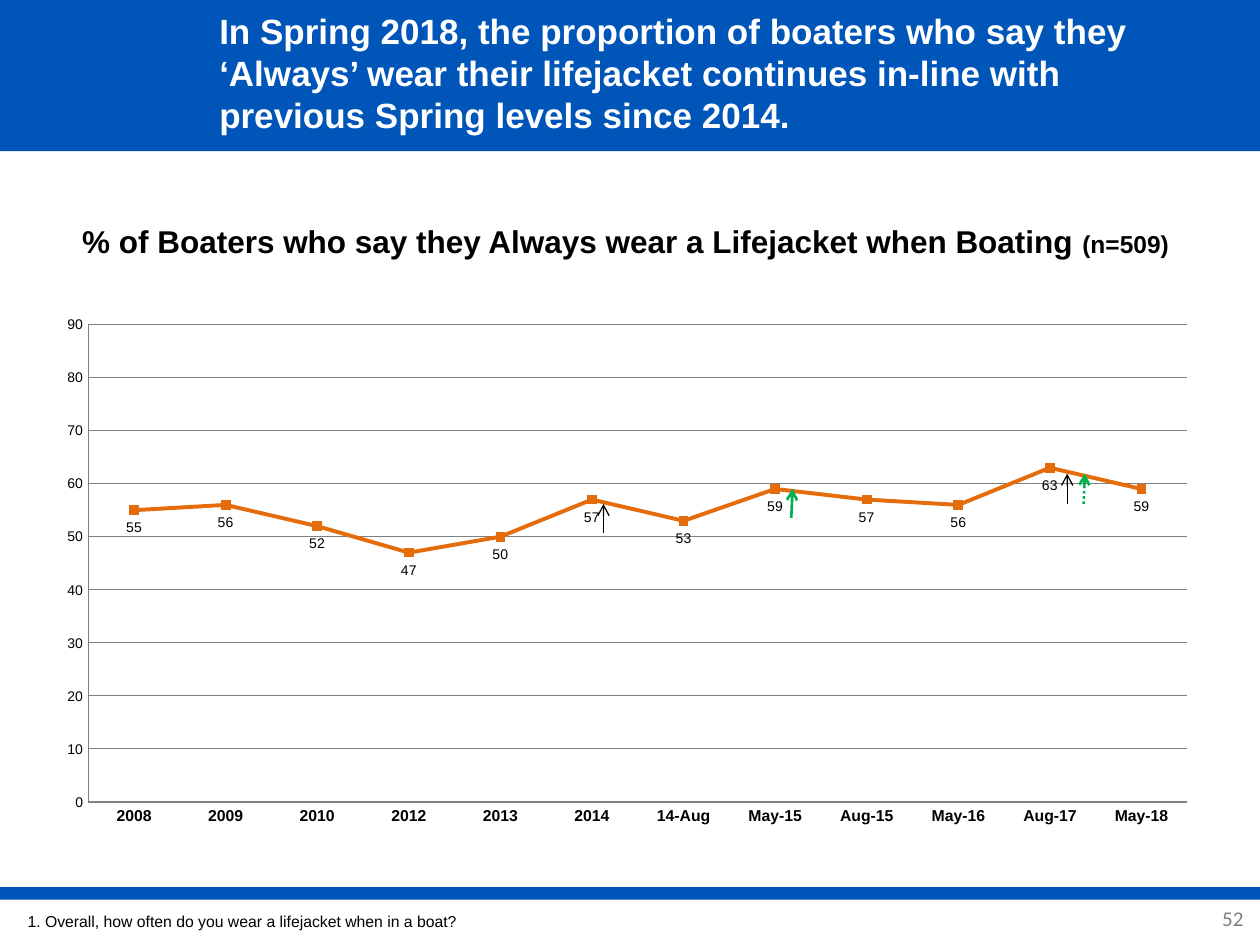
from lxml.etree import SubElement
from pptx import Presentation
from pptx.chart.data import CategoryChartData
from pptx.dml.color import RGBColor
from pptx.enum.chart import XL_CHART_TYPE as ChartType, XL_LABEL_POSITION as LabelPos
from pptx.enum.chart import XL_MARKER_STYLE as Marker, XL_TICK_MARK as Tick
from pptx.enum.dml import MSO_LINE_DASH_STYLE as Dash
from pptx.enum.shapes import MSO_CONNECTOR as Connector, MSO_SHAPE as Shape
from pptx.enum.text import MSO_ANCHOR as Anchor, MSO_AUTO_SIZE as AutoSize, PP_ALIGN as Align
from pptx.oxml.ns import qn
from pptx.util import Inches, Pt

BLUE = RGBColor(0x00, 0x55, 0xB9)
WHITE = RGBColor(0xFF, 0xFF, 0xFF)
BLACK = RGBColor(0x00, 0x00, 0x00)
GRAY = RGBColor(0x80, 0x80, 0x80)
ORANGE = RGBColor(0xE4, 0x6C, 0x0A)
GREEN = RGBColor(0x00, 0xB0, 0x50)

YEARS = ["2008", "2009", "2010", "2012", "2013", "2014", "14-Aug",
         "May-15", "Aug-15", "May-16", "Aug-17", "May-18"]
ALWAYS_WEAR = [55, 56, 52, 47, 50, 57, 53, 59, 57, 56, 63, 59]
PLOT_AREA = {"x": 0.04, "y": 0.03, "w": 0.94, "h": 0.9}


def apply(target, values):
    for name, value in values.items():
        setattr(target, name, value)


class SurveySlide:
    font = "Arial"

    def __init__(self, slide):
        self.slide = slide
        self.shapes = slide.shapes

    def style_font(self, font, size, color=BLACK, bold=False, name=None):
        apply(font, {"name": name or self.font, "size": Pt(size), "bold": bold})
        font.color.rgb = color

    def band(self, *box):
        band = self.shapes.add_shape(Shape.RECTANGLE, *map(Inches, box))
        band.shadow.inherit = False
        band.fill.solid()
        band.fill.fore_color.rgb = BLUE
        band.line.fill.background()
        self.shapes.title.element.addprevious(band.element)

    def fill_frame(self, frame, runs, align=Align.LEFT, anchor=Anchor.MIDDLE, **font):
        apply(frame, {"word_wrap": True, "auto_size": AutoSize.NONE,
                      "vertical_anchor": anchor})
        paragraph = frame.paragraphs[0]
        paragraph.alignment = align
        for words, size in runs:
            run = paragraph.add_run()
            run.text = words
            self.style_font(run.font, size, **font)

    def title(self, box, words, size):
        heading = self.shapes.title
        apply(heading, dict(zip(("left", "top", "width", "height"), map(Inches, box))))
        self.fill_frame(heading.text_frame, [(words, size)], color=WHITE, bold=True)

    def text(self, box, runs, margins=None, **style):
        frame = self.shapes.add_textbox(*map(Inches, box)).text_frame
        apply(frame, margins or {})
        self.fill_frame(frame, runs, **style)

    def arrow(self, start, end, color, width, dash=None):
        arrow = self.shapes.add_connector(Connector.STRAIGHT, *map(Inches, start + end))
        arrow.line.color.rgb = color
        apply(arrow.line, {"width": Pt(width), "dash_style": dash})
        properties = arrow.element.spPr
        SubElement(properties.find(qn("a:ln")), qn("a:tailEnd"), type="arrow")
        SubElement(properties, qn("a:effectLst"))

    def line_chart(self, box, categories, name, values):
        data = CategoryChartData()
        data.categories = categories
        data.add_series(name, values)
        chart = self.shapes.add_chart(
            ChartType.LINE_MARKERS, *map(Inches, box), data).chart
        apply(chart, {"has_legend": False, "has_title": False})
        self.style_font(chart.font, 8)
        self.place_plot(chart)
        self.style_axes(chart)
        plot = chart.plots[0]
        plot.vary_by_categories = False
        self.style_series(plot.series[0])

    def place_plot(self, chart):
        area = chart.element.find(".//" + qn("c:plotArea"))
        layout = area.find(qn("c:layout"))
        if layout is None:
            layout = area.makeelement(qn("c:layout"))
            area.insert(0, layout)
        manual = SubElement(layout, qn("c:manualLayout"))
        SubElement(manual, qn("c:layoutTarget"), val="inner")
        for side in "xy":
            SubElement(manual, qn(f"c:{side}Mode"), val="edge")
        for part, share in PLOT_AREA.items():
            SubElement(manual, qn(f"c:{part}"), val=str(share))

    def style_axes(self, chart):
        years, percent = chart.category_axis, chart.value_axis
        apply(percent, {"minimum_scale": 0, "maximum_scale": 90, "major_unit": 10,
                        "has_major_gridlines": True})
        for axis, size, bold in ((years, 9, True), (percent, 8, False)):
            apply(axis, {"major_tick_mark": Tick.NONE, "minor_tick_mark": Tick.NONE})
            self.style_font(axis.tick_labels.font, size, bold=bold)
        for line in (years.format.line, percent.format.line,
                     percent.major_gridlines.format.line):
            line.color.rgb = GRAY
            line.width = Pt(0.75)

    def style_series(self, series):
        series.smooth = False
        series.format.line.color.rgb = ORANGE
        series.format.line.width = Pt(2.25)
        apply(series.marker, {"style": Marker.SQUARE, "size": 5})
        series.marker.format.fill.solid()
        series.marker.format.fill.fore_color.rgb = ORANGE
        series.marker.format.line.color.rgb = ORANGE
        apply(series.data_labels, {"show_value": True, "position": LabelPos.BELOW})
        self.style_font(series.data_labels.font, 8)


def main():
    deck = Presentation()
    apply(deck, {"slide_width": Inches(10), "slide_height": Inches(7.5)})
    survey = SurveySlide(deck.slides.add_slide(deck.slide_layouts[5]))

    survey.band(0, -0.03, 10, 1.23)
    survey.band(0, 7.04, 10, 0.1)
    survey.title((1.64, 0, 8.09, 1.15),
                 "In Spring 2018, the proportion of boaters who say they ‘Always’ wear "
                 "their lifejacket continues in-line with previous Spring levels since 2014.", 20)
    survey.text((9.36, 7.09, 0.63, 0.4), [("52", 12)],
                {"margin_left": Inches(0.04), "margin_top": Inches(0.04),
                 "margin_right": Inches(0.12), "margin_bottom": Inches(0.04)},
                align=Align.RIGHT, color=GRAY, name="Calibri")
    survey.line_chart((0.33, 2.45, 9.28, 4.21), YEARS, "Series 1", ALWAYS_WEAR)
    survey.text((0.42, 1.71, 9.09, 0.66),
                [("% of Boaters who say they Always wear a Lifejacket when Boating ", 18),
                 ("(n=509)", 14)],
                align=Align.CENTER, anchor=Anchor.TOP, bold=True)
    survey.arrow((4.79, 4.23), (4.79, 4), BLACK, 0.75)
    survey.arrow((6.28, 4.11), (6.29, 3.88), GREEN, 1.5)
    survey.arrow((8.47, 4), (8.47, 3.76), BLACK, 0.75)
    survey.arrow((8.6, 4), (8.61, 3.76), GREEN, 1.5, Dash.ROUND_DOT)
    survey.text((0.12, 7.12, 5.71, 0.38),
                [("1. Overall, how often do you wear a lifejacket when in a boat?", 9)])

    deck.save("out.pptx")


if __name__ == "__main__":
    main()
